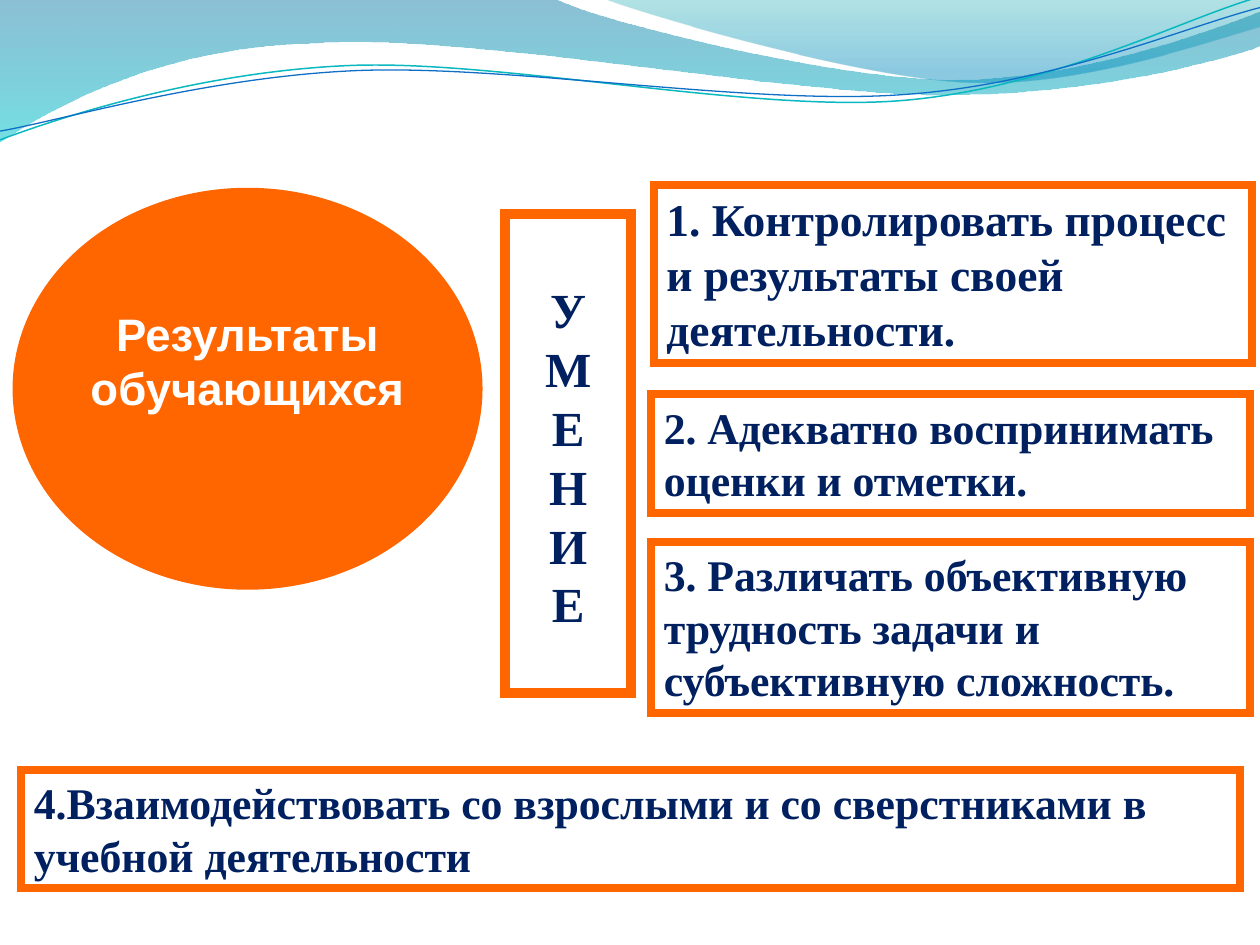
from dataclasses import dataclass
from math import cos, radians, sin

from lxml.etree import SubElement
from pptx import Presentation
from pptx.dml.color import RGBColor
from pptx.enum.shapes import MSO_SHAPE as Preset
from pptx.enum.text import MSO_ANCHOR as Anchor, MSO_AUTO_SIZE as AutoSize, PP_ALIGN as Align
from pptx.oxml.ns import qn
from pptx.util import Cm, Pt

INCH = 2.54
ORANGE, NAVY, WHITE = "FF6600", "002060", "FFFFFF"
SERIF, SANS = "Times New Roman", "Arial"

Point = tuple[float, float]


@dataclass
class Stop:
    position: float
    color: str
    opacity: int


@dataclass
class Wave:
    """Steps in inches: one point is a straight step, three points a Bezier curve."""
    start: Point
    steps: list[list[Point]]
    stops: tuple = ()
    line: str = ""
    width: float = 0
    center: Point = (0, 0)
    rotation: float = 0


@dataclass
class Card:
    left: float
    top: float
    width: float
    height: float
    text: str
    size: int = 25


# Waves across the top
WAVES = [
    Wave((0, 0), [
        [(4.4, -0.01)],
        [(4.76, 0.17), (6.64, 0.63), (7.58, 0.63)],
        [(8.53, 0.63), (9.58, 0.26), (10, 0.09)],
        [(10.01, 0.36)],
        [(9.83, 0.44), (8.7, 0.76), (7.46, 0.75)],
        [(6.22, 0.75), (3.82, 0.28), (2.57, 0.34)],
        [(1.29, 0.36), (0.46, 0.83), (-0.01, 1.13)],
    ], stops=(Stop(0, "0074A1", 45), Stop(1, "00C6CF", 55))),
    Wave((4.79, -0.01), [
        [(5.09, 0.11), (6.82, 0.62), (7.69, 0.65)],
        [(8.56, 0.69), (9.61, 0.32), (10, 0.21)],
        [(10, 0)],
    ], stops=(Stop(0, "00A1A9", 30), Stop(0.8, "008BBF", 45))),
    Wave((0, 1.11), [
        [(0.48, 0.93), (1.58, 0.57), (2.77, 0.52)],
        [(3.95, 0.47), (5.93, 0.89), (7.13, 0.8)],
        [(8.33, 0.71), (9.38, 0.15), (9.98, -0.02)],
    ], line="0AB8BF", width=0.85, center=(4.99, 0.58), rotation=-2.7),
    Wave((0, 1.04), [
        [(0.47, 0.96), (1.64, 0.61), (2.83, 0.56)],
        [(4.03, 0.51), (5.97, 0.84), (7.17, 0.75)],
        [(8.36, 0.67), (9.41, 0.21), (10, 0.06)],
    ], line="0F6FC6", width=0.75, center=(4.99, 0.59), rotation=-2.7),
]

# Numbered skills
CARDS = [
    Card(5.19, 1.47, 4.75, 1.41, "1. Контролировать процесс и результаты своей деятельности.", 26),
    Card(5.17, 3.13, 4.75, 0.94, "2. Адекватно воспринимать оценки и отметки."),
    Card(5.17, 4.3, 4.75, 1.36,
         "3. Различать объективную трудность задачи и субъективную сложность."),
    Card(0.17, 6.11, 9.67, 0.94,
         "4.Взаимодействовать со взрослыми и со сверстниками в учебной деятельности"),
]


def inches(value: float) -> Cm:
    return Cm(value * INCH)


def rgb(color: str) -> RGBColor:
    return RGBColor.from_string(color)


def place(point: Point, wave: Wave) -> tuple[Cm, Cm]:
    """Turn a point back by the rotation of its shape."""
    angle = radians(-wave.rotation)
    cx, cy = wave.center
    x, y = point[0] - cx, point[1] - cy
    return (inches(cx + x * cos(angle) - y * sin(angle)),
            inches(cy + x * sin(angle) + y * cos(angle)))


def bend(shape, steps: list[list[Point]]) -> None:
    """Join each three straight steps of a curve into one Bezier curve."""
    straight = iter(list(shape.element.iter(qn("a:lnTo"))))
    for step in steps:
        parts = [next(straight) for _ in step]
        if len(parts) == 3:
            parts[0].tag = qn("a:cubicBezTo")
            for part in parts[1:]:
                parts[0].append(part[0])
                part.getparent().remove(part)


def draw_wave(page, wave: Wave) -> None:
    builder = page.shapes.build_freeform(*place(wave.start, wave))
    builder.add_line_segments([place(point, wave) for step in wave.steps for point in step],
                              close=bool(wave.stops))
    shape = builder.convert_to_shape()
    bend(shape, wave.steps)
    shape.shadow.inherit = False
    shape.rotation = wave.rotation
    if not wave.stops:
        shape.fill.background()
        shape.line.color.rgb = rgb(wave.line)
        shape.line.width = Pt(wave.width)
        return
    shape.line.fill.background()
    shape.fill.gradient()
    shape.fill.gradient_angle = 270
    for target, stop in zip(shape.fill.gradient_stops, wave.stops):
        target.position = stop.position
        target.color.rgb = rgb(stop.color)
    colors = shape.element.spPr.iter(qn("a:srgbClr"))
    for color, stop in zip(list(colors), wave.stops):
        SubElement(color, qn("a:alpha"), val=str(stop.opacity * 1000))


def add_box(page, preset, left: float, top: float, width: float, height: float,
            fill: str = "", line: str = "", line_width: float = 0):
    box = page.shapes.add_shape(preset, *map(inches, (left, top, width, height)))
    box.shadow.inherit = False
    if fill:
        box.fill.solid()
        box.fill.fore_color.rgb = rgb(fill)
    else:
        box.fill.background()
    if line:
        box.line.color.rgb = rgb(line)
        box.line.width = Pt(line_width)
        # Square corners
        SubElement(box.line._get_or_add_ln(), qn("a:miter"), lim="800000")
    else:
        box.line.fill.background()
    return box


def write(box, *lines: str, size: int, font: str = SERIF, color: str = NAVY,
          align=Align.LEFT, side: float = 0.1, top: float = 0.05) -> None:
    frame = box.text_frame
    frame.word_wrap = True
    frame.auto_size = AutoSize.SHAPE_TO_FIT_TEXT
    frame.vertical_anchor = Anchor.TOP
    frame.margin_left = frame.margin_right = inches(side)
    frame.margin_top, frame.margin_bottom = inches(top), inches(0.04)
    for index, line in enumerate(lines):
        para = frame.add_paragraph() if index else frame.paragraphs[0]
        para.alignment = align
        span = para.add_run()
        span.text = line
        span.font.name, span.font.size, span.font.bold = font, Pt(size), True
        span.font.color.rgb = rgb(color)


def main() -> None:
    deck = Presentation()
    deck.slide_width, deck.slide_height = inches(10), inches(7.5)
    page = deck.slides.add_slide(deck.slide_layouts[6])

    for wave in WAVES:
        draw_wave(page, wave)

    # Topic
    topic = add_box(page, Preset.OVAL, 0.1, 1.49, 3.73, 3.19, fill=ORANGE)
    write(topic, "Результаты обучающихся", size=26, font=SANS, color=WHITE,
          align=Align.CENTER, side=0.04, top=0.47)

    # Vertical heading, one letter a line
    heading = add_box(page, Preset.RECTANGLE, 4.01, 1.7, 1, 3.8, line=ORANGE, line_width=6)
    write(heading, *"УМЕНИЕ", size=28, align=Align.CENTER, top=0.52)

    for card in CARDS:
        box = add_box(page, Preset.RECTANGLE, card.left, card.top, card.width, card.height,
                      line=ORANGE, line_width=4.5)
        write(box, card.text, size=card.size)

    deck.save("out.pptx")


if __name__ == "__main__":
    main()
